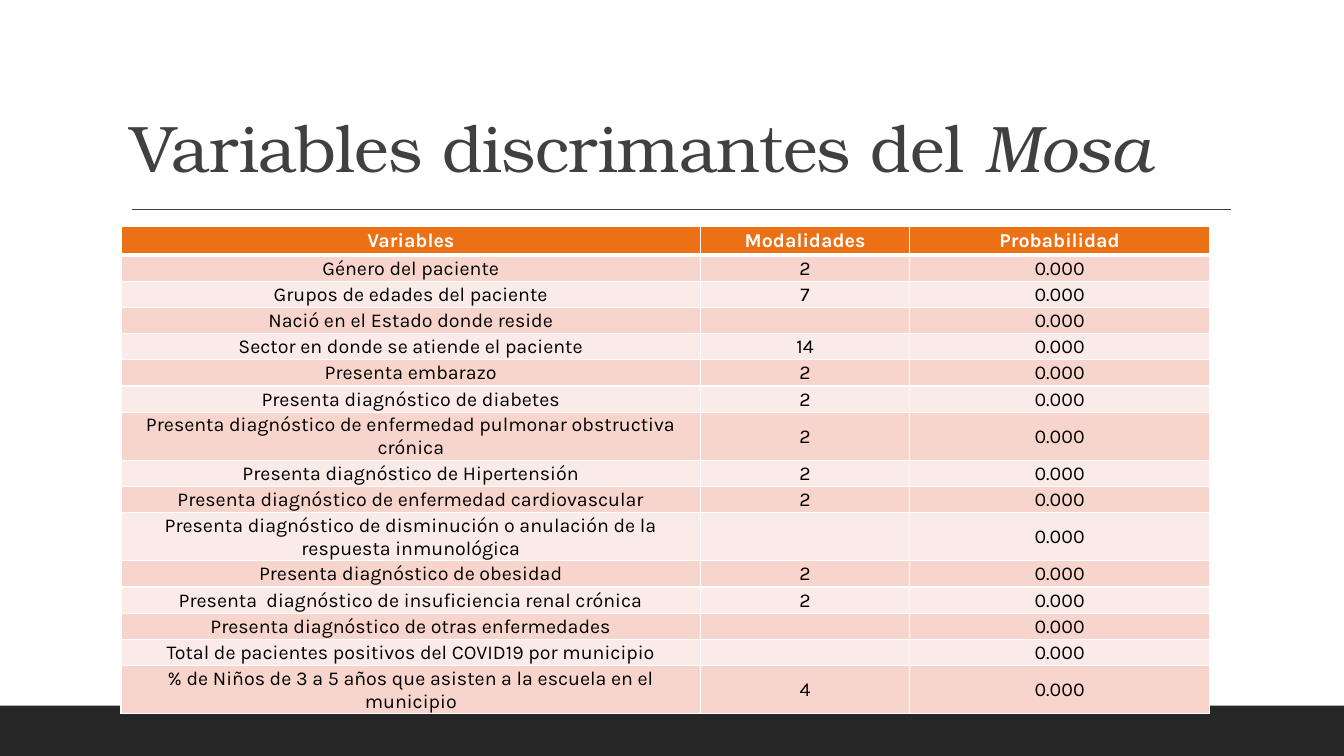
from lxml.etree import SubElement
from pptx import Presentation
from pptx.dml.color import RGBColor
from pptx.enum.shapes import MSO_CONNECTOR as Connector, MSO_SHAPE as Shape
from pptx.enum.text import MSO_ANCHOR as Anchor, PP_ALIGN as Align
from pptx.oxml.ns import qn
from pptx.util import Inches, Pt

TITLE_FONT, TABLE_FONT = "TeX Gyre Bonum", "Karla"
DARK, GREY, WHITE, BLACK = "262626", "404040", "FFFFFF", "000000"
HEADER_FILL, BAND_FILLS = "EC7016", ("F8D5CC", "FBEBE8")
COLUMN_WIDTHS = (5.75, 2.07, 2.98)
HEADER_HEIGHT, ROW_HEIGHT, TALL_HEIGHT = 0.28, 0.26, 0.45
TALL_TEXT = 60
PROBABILITY = "0.000"
HEADERS = ("Variables", "Modalidades", "Probabilidad")
VARIABLES = (
    ("Género del paciente", "2"),
    ("Grupos de edades del paciente", "7"),
    ("Nació en el Estado donde reside", ""),
    ("Sector en donde se atiende el paciente", "14"),
    ("Presenta embarazo", "2"),
    ("Presenta diagnóstico de diabetes", "2"),
    ("Presenta diagnóstico de enfermedad pulmonar obstructiva crónica", "2"),
    ("Presenta diagnóstico de Hipertensión", "2"),
    ("Presenta diagnóstico de enfermedad cardiovascular", "2"),
    ("Presenta diagnóstico de disminución o anulación de la respuesta inmunológica", ""),
    ("Presenta diagnóstico de obesidad", "2"),
    ("Presenta  diagnóstico de insuficiencia renal crónica", "2"),
    ("Presenta diagnóstico de otras enfermedades", ""),
    ("Total de pacientes positivos del COVID19 por municipio", ""),
    ("% de Niños de 3 a 5 años que asisten a la escuela en el municipio", "4"),
)


def color(value):
    """Turn a hex string into a colour."""
    return RGBColor.from_string(value)


def set_font(font, name, size, value, bold=False):
    """Set the face, size, colour and weight of a font."""
    font.name, font.size, font.bold = name, Pt(size), bold
    font.color.rgb = color(value)


def add_footer_band(slide):
    """Add the dark band along the bottom edge."""
    band = slide.shapes.add_shape(
        Shape.RECTANGLE, 0, Inches(7), Inches(13.33), Inches(0.5))
    band.shadow.inherit = False
    band.fill.solid()
    band.fill.fore_color.rgb = color(DARK)
    band.line.fill.background()


def add_title_rule(slide):
    """Add the thin line below the title."""
    rule = slide.shapes.add_connector(
        Connector.STRAIGHT, Inches(1.31), Inches(2.08), Inches(12.21), Inches(2.08))
    rule.line.color.rgb = color(GREY)
    rule.line.width = Pt(1)
    SubElement(rule.element.spPr, qn("a:effectLst"))


def add_title(slide, text, emphasis):
    """Add the title, with its last part in italics."""
    box = slide.shapes.add_textbox(
        Inches(1.2), Inches(0.31), Inches(11), Inches(1.59))
    frame = box.text_frame
    frame.word_wrap = True
    frame.vertical_anchor = Anchor.BOTTOM
    paragraph = frame.paragraphs[0]
    paragraph.line_spacing = 0.9
    set_font(paragraph.font, TITLE_FONT, 47, GREY)
    for part in (text, emphasis):
        run = paragraph.add_run()
        run.text = part
        run._r.get_or_add_rPr().set("spc", "-50")
    run.font.italic = True


def add_borders(cell, top, bottom):
    """Draw white borders around a cell, with widths in points."""
    properties = cell._tc.get_or_add_tcPr()
    for side, width in (("L", 1), ("R", 1), ("T", top), ("B", bottom)):
        border = SubElement(properties, qn(f"a:ln{side}"), w=str(Pt(width)))
        fill = SubElement(border, qn("a:solidFill"))
        SubElement(fill, qn("a:srgbClr"), val=WHITE)


def fill_cell(cell, text, fill, font_color, bold):
    """Write centred text in a cell and paint its background."""
    cell.fill.solid()
    cell.fill.fore_color.rgb = color(fill)
    cell.vertical_anchor = Anchor.MIDDLE
    cell.margin_left = cell.margin_right = cell.margin_top = Inches(0.01)
    cell.margin_bottom = 0
    paragraph = cell.text_frame.paragraphs[0]
    paragraph.alignment = Align.CENTER
    set_font(paragraph.font, TABLE_FONT, 14, font_color, bold)
    if text:
        paragraph.add_run().text = text
    else:
        SubElement(paragraph._p, qn("a:endParaRPr"), sz="1400")


def add_variables_table(slide):
    """Add the table of variables with banded rows."""
    rows = [HEADERS] + [(*variable, PROBABILITY) for variable in VARIABLES]
    heights = [HEADER_HEIGHT] + [
        TALL_HEIGHT if len(name) > TALL_TEXT else ROW_HEIGHT for name, _ in VARIABLES]
    table = slide.shapes.add_table(
        len(rows), len(HEADERS), Inches(1.2), Inches(2.25),
        Inches(sum(COLUMN_WIDTHS)), Inches(sum(heights))).table
    for column, width in zip(table.columns, COLUMN_WIDTHS):
        column.width = Inches(width)
    for index, (texts, height) in enumerate(zip(rows, heights)):
        table.rows[index].height = Inches(height)
        header = index == 0
        fill = HEADER_FILL if header else BAND_FILLS[(index - 1) % 2]
        for cell, text in zip(table.rows[index].cells, texts):
            add_borders(cell, 3 if index == 1 else 1, 3 if header else 1)
            fill_cell(cell, text, fill, WHITE if header else BLACK, header)


def main():
    """Build the slide and save it."""
    presentation = Presentation()
    presentation.slide_width = Inches(13.33)
    presentation.slide_height = Inches(7.5)
    slide = presentation.slides.add_slide(presentation.slide_layouts[6])
    add_footer_band(slide)
    add_title_rule(slide)
    add_title(slide, "Variables discrimantes del ", "Mosa")
    add_variables_table(slide)
    presentation.save("out.pptx")


if __name__ == "__main__":
    main()
